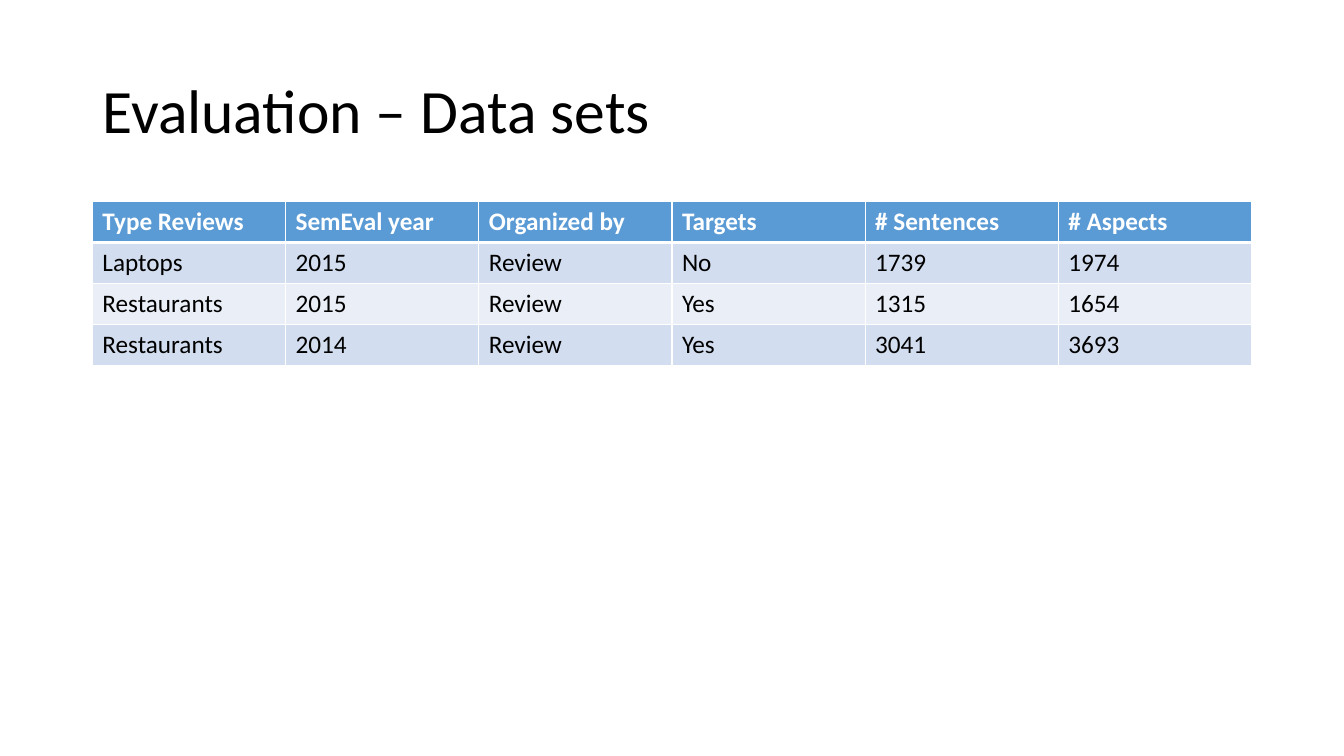
"""Build the evaluation slide with its table of review data sets."""
import dataclasses
import typing

import lxml.etree
import pptx
import pptx.dml.color
import pptx.enum.text
import pptx.oxml.ns
import pptx.util

Pt = pptx.util.Pt
LEFT, WIDTH = 66, 828
ROW_HEIGHT = 29.2
WHITE, BLACK = "FFFFFF", "000000"
HEADER_FILL = "5B9BD5"
BAND_FILLS = ("D2DEEF", "EAEFF7")
HEADINGS = ("Type Reviews", "SemEval year", "Organized by", "Targets", "# Sentences", "# Aspects")


@dataclasses.dataclass(frozen=True)
class DataSet:
    reviews: str
    year: int
    organizer: str
    targets: str
    sentences: int
    aspects: int


DATA_SETS = (
    DataSet("Laptops", 2015, "Review", "No", 1739, 1974),
    DataSet("Restaurants", 2015, "Review", "Yes", 1315, 1654),
    DataSet("Restaurants", 2014, "Review", "Yes", 3041, 3693),
)


def apply_color(color_format: typing.Any, hex_color: str) -> None:
    color_format.rgb = pptx.dml.color.RGBColor.from_string(hex_color)


def set_attributes(target: typing.Any, values: dict[str, typing.Any]) -> None:
    for name, value in values.items():
        setattr(target, name, value)


def format_font(font: typing.Any, size: float, color: str, bold: bool = False) -> None:
    set_attributes(font, {"name": "Calibri", "size": Pt(size), "bold": bold})
    apply_color(font.color, color)


def add_borders(cell: typing.Any, widths: dict[str, float]) -> None:
    qn = pptx.oxml.ns.qn
    properties = cell._tc.get_or_add_tcPr()
    for side, width in widths.items():
        line = lxml.etree.SubElement(properties, qn(f"a:ln{side}"), w=str(int(Pt(width))))
        fill = lxml.etree.SubElement(line, qn("a:solidFill"))
        lxml.etree.SubElement(fill, qn("a:srgbClr"), val=WHITE)


def fill_row(table: typing.Any, row: int, values: typing.Sequence[typing.Any]) -> None:
    is_header = row == 0
    fill = HEADER_FILL if is_header else BAND_FILLS[(row - 1) % 2]
    borders = {"L": 1, "R": 1, "T": 3 if row == 1 else 1, "B": 3 if is_header else 1}
    table.rows[row].height = Pt(ROW_HEIGHT)
    for column, value in enumerate(values):
        cell = table.cell(row, column)
        cell.text = str(value)
        format_font(cell.text_frame.paragraphs[0].runs[0].font, 18, WHITE if is_header else BLACK, is_header)
        add_borders(cell, borders)
        cell.fill.solid()
        apply_color(cell.fill.fore_color, fill)


def add_heading(slide: typing.Any) -> None:
    heading = slide.shapes.title
    set_attributes(heading, {"left": Pt(LEFT), "top": Pt(28.8), "width": Pt(WIDTH), "height": Pt(104.4)})
    set_attributes(heading.text_frame, {
        "text": "Evaluation – Data sets",
        "word_wrap": True,
        "auto_size": pptx.enum.text.MSO_AUTO_SIZE.NONE,
        "vertical_anchor": pptx.enum.text.MSO_ANCHOR.MIDDLE,
    })
    line = heading.text_frame.paragraphs[0]
    set_attributes(line, {"alignment": pptx.enum.text.PP_ALIGN.LEFT, "line_spacing": 0.9})
    format_font(line.runs[0].font, 44, BLACK)


def add_data_sets(slide: typing.Any) -> None:
    rows = [HEADINGS, *map(dataclasses.astuple, DATA_SETS)]
    table = slide.shapes.add_table(
        len(rows), len(HEADINGS), Pt(LEFT), Pt(144), Pt(WIDTH), Pt(ROW_HEIGHT * len(rows))
    ).table
    for row, values in enumerate(rows):
        fill_row(table, row, values)


def main() -> None:
    presentation = pptx.Presentation()
    set_attributes(presentation, {"slide_width": Pt(960), "slide_height": Pt(540)})
    slide = presentation.slides.add_slide(presentation.slide_layouts.get_by_name("Title Only"))
    add_heading(slide)
    add_data_sets(slide)
    presentation.save("out.pptx")


if __name__ == "__main__":
    main()
